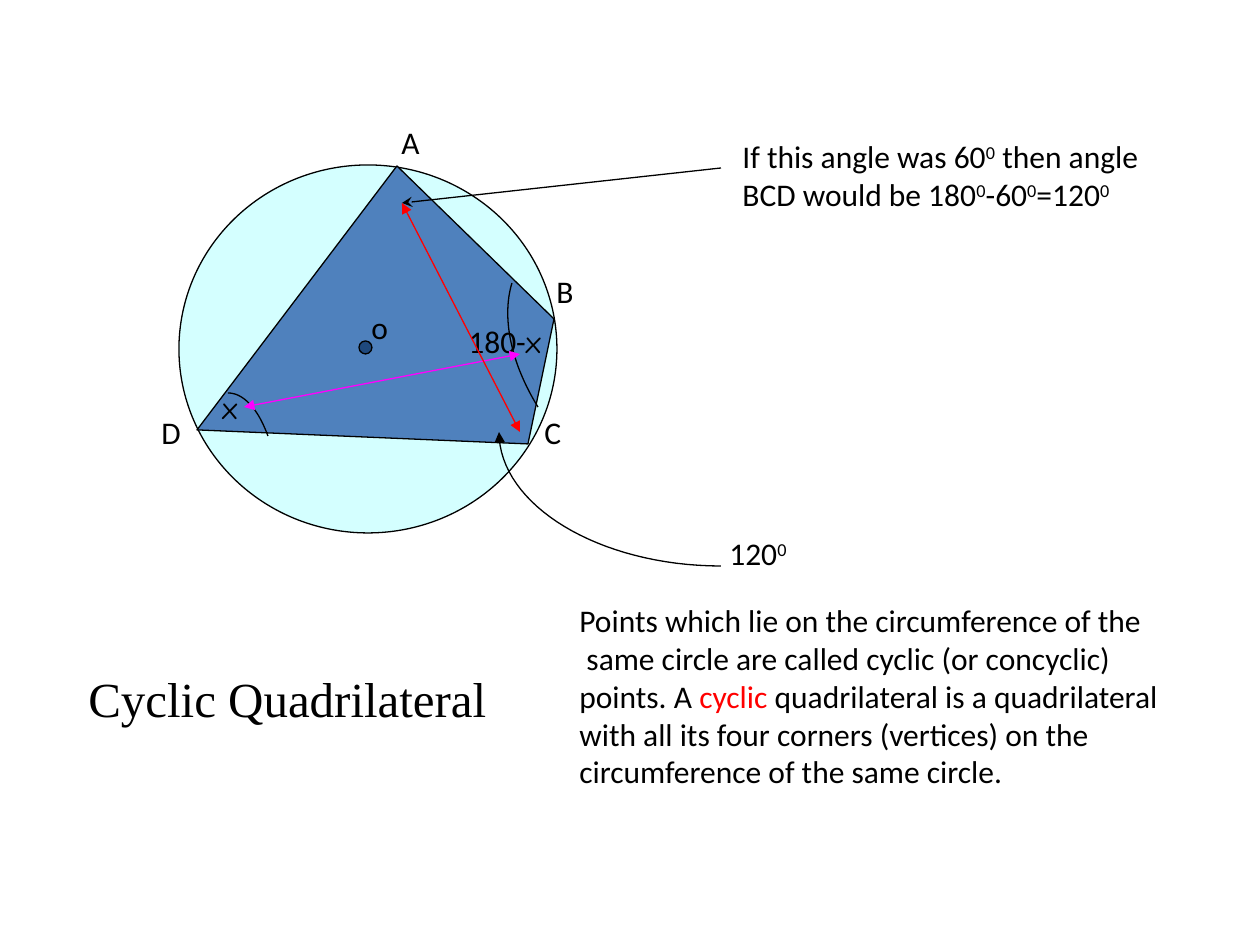
import pptx
import pptx.dml.color
import pptx.enum.shapes
import pptx.enum.text
import pptx.oxml
import pptx.oxml.ns
import pptx.util

EMU_PER_PX = 914400 / 126
BLACK, RED, MAGENTA = "000000", "FF0000", "FF00FF"
CALIBRI, COMIC, TIMES = "Calibri", "Comic Neue", "Times New Roman"
CURVE_STEPS = 32


def px(length):
    return pptx.util.Emu(round(length * EMU_PER_PX))


def rgb(value):
    return pptx.dml.color.RGBColor.from_string(value)


def child(parent, tag, **attributes):
    element = pptx.oxml.parse_xml(f"<a:{tag} {pptx.oxml.ns.nsdecls('a')}/>")
    for name, value in attributes.items():
        element.set(name, value)
    parent.append(element)


def set_line(shape, color=BLACK, head=None, tail=None):
    shape.line.color.rgb = rgb(color)
    shape.line.width = pptx.util.Pt(0.75)
    outline = shape._element.spPr.find(pptx.oxml.ns.qn("a:ln"))
    for tag, arrow in (("headEnd", head), ("tailEnd", tail)):
        if arrow:
            child(outline, tag, type=arrow)


def set_fill(shape, color, opacity=100):
    shape.shadow.inherit = False
    shape.fill.solid()
    shape.fill.fore_color.rgb = rgb(color)
    if opacity < 100:
        fill_color = shape._element.spPr.find(".//" + pptx.oxml.ns.qn("a:srgbClr"))
        child(fill_color, "alpha", val=str(opacity * 1000))


def add_circle(slide, left, top, width, height, color, opacity=100):
    circle = slide.shapes.add_shape(
        pptx.enum.shapes.MSO_SHAPE.OVAL, px(left), px(top), px(width), px(height)
    )
    set_fill(circle, color, opacity)
    set_line(circle)


def add_outline(slide, points, close):
    start, *others = [(px(x), px(y)) for x, y in points]
    builder = slide.shapes.build_freeform(*start)
    builder.add_line_segments(others, close=close)
    return builder.convert_to_shape()


def add_polygon(slide, points, color):
    polygon = add_outline(slide, points, close=True)
    set_fill(polygon, color)
    set_line(polygon)


def bezier_point(controls, t):
    weights = ((1 - t) ** 3, 3 * t * (1 - t) ** 2, 3 * t**2 * (1 - t), t**3)
    return tuple(sum(w * c for w, c in zip(weights, axis)) for axis in zip(*controls))


def add_curve(slide, controls, tail=None):
    points = [bezier_point(controls, i / CURVE_STEPS) for i in range(CURVE_STEPS + 1)]
    curve = add_outline(slide, points, close=False)
    curve.shadow.inherit = False
    curve.fill.background()
    set_line(curve, tail=tail)


def add_arrow(slide, start, end, color, head, tail=None):
    arrow = slide.shapes.add_connector(
        pptx.enum.shapes.MSO_CONNECTOR.STRAIGHT, *map(px, start + end)
    )
    set_line(arrow, color, head, tail)
    child(arrow._element.spPr, "effectLst")


def add_text(slide, left, top, width, height, paragraphs, size=18, wrap=False):
    frame = slide.shapes.add_textbox(px(left), px(top), px(width), px(height)).text_frame
    frame.word_wrap = wrap
    for index, runs in enumerate(paragraphs):
        paragraph = frame.add_paragraph() if index else frame.paragraphs[0]
        for words, *style in runs:
            options = style[0] if style else {}
            run = paragraph.add_run()
            run.text = words
            run.font.size = pptx.util.Pt(size)
            run.font.name = options.get("font", CALIBRI)
            run.font.color.rgb = rgb(options.get("color", BLACK))
            if options.get("raised"):
                run._r.get_or_add_rPr().set("baseline", "30000")


def main():
    deck = pptx.Presentation()
    deck.slide_width, deck.slide_height = px(1260), px(945)
    slide = deck.slides.add_slide(deck.slide_layouts[6])

    add_circle(slide, 179, 165, 378, 368, "00FFFF", opacity=17)
    add_polygon(slide, [(197, 430), (397, 166), (554, 319), (528, 444)], "4F81BD")
    add_circle(slide, 359, 341, 13, 13, "1F497D")

    for letter, left, top in (
        ("o", 359, 302),
        ("A", 389, 117),
        ("B", 544, 266),
        ("C", 532, 407),
        ("D", 149, 407),
    ):
        add_text(slide, left, top, 47, 50, [[(letter,)]])

    add_curve(slide, [(228, 393), (243, 393), (258, 408), (268, 436)])
    add_curve(slide, [(512, 283), (501, 319), (512, 365), (538, 407)])

    unknown = ("x", {"font": COMIC})
    add_text(slide, 210, 382, 34, 50, [[unknown]])
    add_text(slide, 456, 316, 106, 50, [[("180-",), unknown]])

    angle_a = (402, 203)
    add_arrow(slide, (244, 407), (520, 354), MAGENTA, "triangle", "triangle")
    add_arrow(slide, angle_a, (721, 168), BLACK, "stealth")

    degree = ("0", {"raised": True})
    add_text(slide, 730, 131, 471, 88, [
        [("If this angle was 60",), degree, (" then angle",)],
        [("BCD would be 180",), degree, ("-60",), degree, ("=120",), degree],
    ])
    add_arrow(slide, angle_a, (520, 432), RED, "triangle", "triangle")
    add_curve(slide, [(721, 566), (599, 566), (499, 505), (499, 432)], tail="triangle")
    add_text(slide, 717, 528, 89, 50, [[("120",), degree]])

    add_text(slide, 76, 662, 426, 128,
             [[("Cyclic Quadrilateral", {"font": TIMES})]], size=28)
    add_text(slide, 567, 595, 655, 202, [
        [("Points which lie on the circumference of the",)],
        [(" same circle are called cyclic (or concyclic)",)],
        [("points. A ",), ("cyclic ", {"color": RED}),
         ("quadrilateral is a quadrilateral",)],
        [("with all its four corners (vertices) on the",)],
        [("circumference of the same circle.",)],
    ], wrap=True)

    deck.save("out.pptx")


if __name__ == "__main__":
    main()
